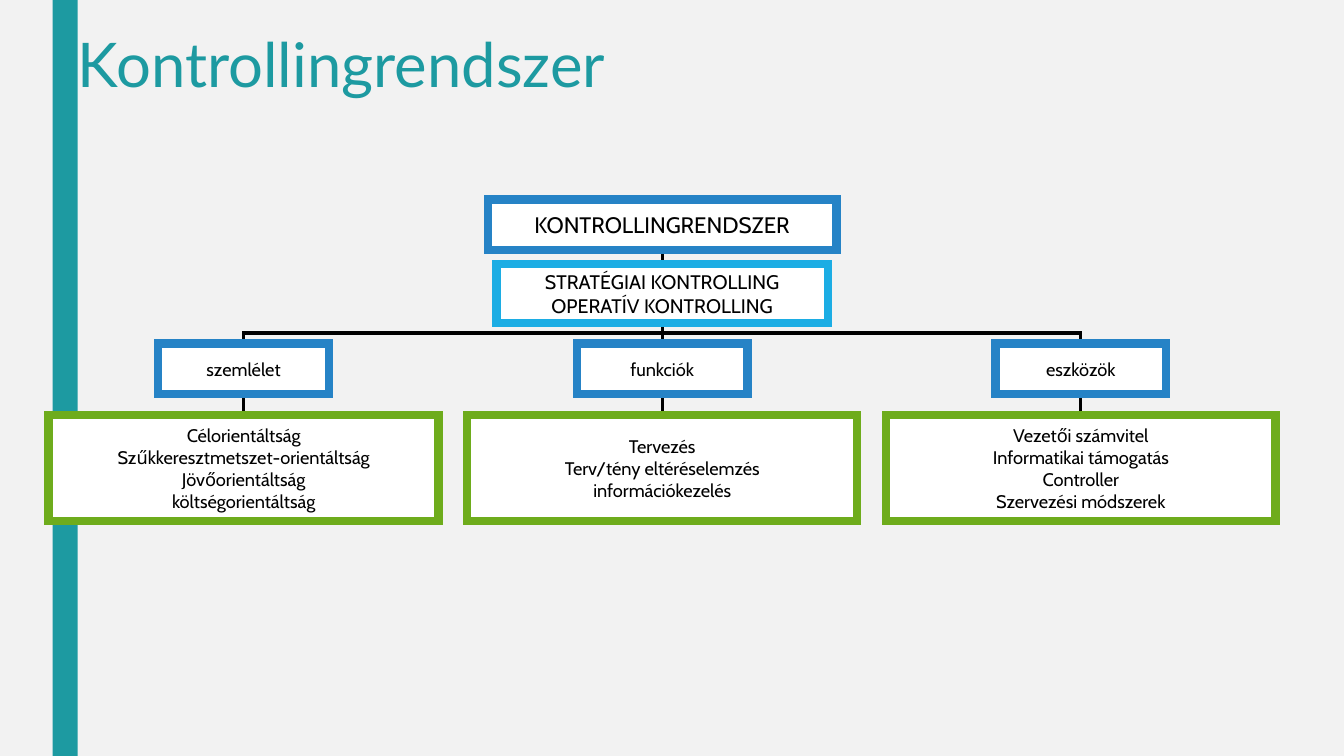
"""Build the Kontrollingrendszer organisation chart slide."""
from lxml.etree import SubElement
from pptx import Presentation
from pptx.dml.color import RGBColor
from pptx.enum.shapes import MSO_CONNECTOR, MSO_SHAPE
from pptx.enum.text import MSO_ANCHOR, PP_ALIGN
from pptx.oxml.ns import qn
from pptx.util import Pt

PAPER = RGBColor(0xF2, 0xF2, 0xF2)
WHITE = RGBColor(0xFF, 0xFF, 0xFF)
BLACK = RGBColor(0, 0, 0)
TEAL = RGBColor(0x1D, 0x9A, 0xA1)
BLUE = RGBColor(0x26, 0x83, 0xC6)
SKY = RGBColor(0x1C, 0xAD, 0xE4)
GREEN = RGBColor(0x6E, 0xAC, 0x1C)

MID = 473
STEP = 299
TOP = 245.5
JOIN = 233.25

GROUPS = [
    ("szemlélet", ["Célorientáltság", "Szűkkeresztmetszet-orientáltság",
                   "Jövőorientáltság", "költségorientáltság"]),
    ("funkciók", ["Tervezés", "Terv/tény eltéréselemzés",
                  "információkezelés"]),
    ("eszközök", ["Vezetői számvitel", "Informatikai támogatás",
                  "Controller", "Szervezési módszerek"]),
]


def write(frame, lines, size=13, font="Cabin", color=BLACK,
          align=PP_ALIGN.CENTER, anchor=MSO_ANCHOR.MIDDLE, wrap=False,
          inset=(4.5, 2.25), spacing=None):
    frame.word_wrap = wrap
    frame.vertical_anchor = anchor
    frame.margin_left = frame.margin_right = Pt(inset[0])
    frame.margin_top = frame.margin_bottom = Pt(inset[1])
    for i, line in enumerate(lines):
        para = frame.add_paragraph() if i else frame.paragraphs[0]
        para.alignment = align
        para.line_spacing = spacing
        run = para.add_run()
        run.text = line
        run.font.name = font
        run.font.size = Pt(size)
        run.font.color.rgb = color


def stroke(shape, color, width):
    shape.line.color.rgb = color
    shape.line.width = Pt(width)
    line = shape.element.spPr.find(qn("a:ln"))
    SubElement(line, qn("a:miter"), lim="800000")


def block(slide, x, y, w, h, fill):
    shape = slide.shapes.add_shape(MSO_SHAPE.RECTANGLE,
                                   Pt(x), Pt(y), Pt(w), Pt(h))
    shape.shadow.inherit = False
    shape.fill.solid()
    shape.fill.fore_color.rgb = fill
    shape.line.fill.background()
    return shape


def box(slide, center, y, w, h, edge, lines, **style):
    shape = block(slide, center - w / 2, y, w, h, WHITE)
    stroke(shape, edge, 6)
    write(shape.text_frame, lines, **style)
    return shape


def wire(slide, bar, kind, x, y, w, h):
    link = slide.shapes.add_connector(kind, Pt(x), Pt(y), Pt(x + w), Pt(y + h))
    stroke(link, BLACK, 2.25)
    SubElement(link.element.spPr, qn("a:effectLst"))
    bar.element.addnext(link.element)
    return link


def stem(slide, bar, upper, lower):
    link = wire(slide, bar, MSO_CONNECTOR.STRAIGHT, 0, 0, 0, 0)
    link.begin_connect(upper, 2)
    link.end_connect(lower, 0)


def branch(slide, bar, side):
    """Draw the bent line from a side box up to the middle (side is -1 or 1)."""
    rise = TOP - JOIN
    x = MID + side * STEP / 2 - rise / 2
    y = (TOP + JOIN - STEP) / 2
    link = wire(slide, bar, MSO_CONNECTOR.ELBOW, x, y, rise, STEP)
    frame = link.element.spPr.find(qn("a:xfrm"))
    frame.set("rot", "16200000")
    if side > 0:
        frame.set("rot", "5400000")
        frame.set("flipH", "1")
    guides = link.element.spPr.find(qn("a:prstGeom")).find(qn("a:avLst"))
    SubElement(guides, qn("a:gd"), name="adj1", fmla="val 62500")


def main():
    deck = Presentation()
    deck.slide_width, deck.slide_height = Pt(960), Pt(540)
    slide = deck.slides.add_slide(deck.slide_layouts[5])
    slide.background.fill.solid()
    slide.background.fill.fore_color.rgb = PAPER

    bar = block(slide, 37.5, 0, 18, 540, TEAL)
    title = slide.shapes.title
    title.left, title.top = Pt(48.5), Pt(21.5)
    title.width, title.height = Pt(864), Pt(90)
    write(title.text_frame, ["Kontrollingrendszer"], size=44, font="Lato",
          color=TEAL, align=PP_ALIGN.LEFT, anchor=MSO_ANCHOR.TOP, wrap=True,
          inset=(7.2, 3.6), spacing=0.89)

    root = box(slide, MID, 142.5, 249, 36, BLUE, ["KONTROLLINGRENDSZER"],
               size=16)
    level = box(slide, MID, 188.75, 237, 42, SKY,
                ["STRATÉGIAI KONTROLLING", "OPERATÍV KONTROLLING"], size=14)
    stem(slide, bar, root, level)
    for side, (name, items) in enumerate(GROUPS, -1):
        center = MID + side * STEP
        head = box(slide, center, TOP, 122, 36, BLUE, [name])
        body = box(slide, center, 296.5, 278.5, 75.5, GREEN, items)
        stem(slide, bar, head, body)
        if side:
            branch(slide, bar, side)
        else:
            stem(slide, bar, level, head)
    deck.save("out.pptx")


if __name__ == "__main__":
    main()
